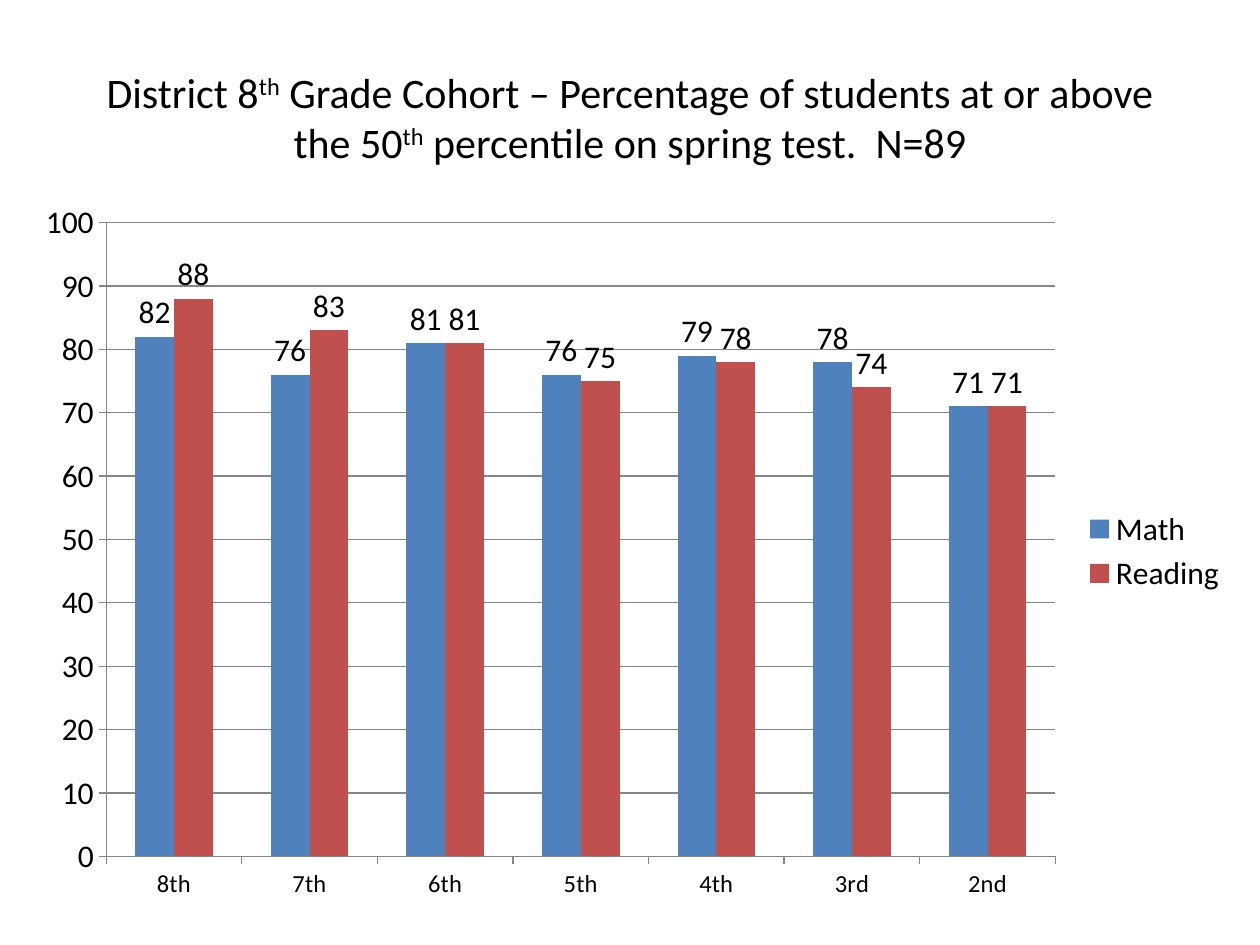
from pptx import Presentation
from pptx.chart.data import CategoryChartData
from pptx.dml.color import RGBColor
from pptx.enum.chart import XL_CHART_TYPE as ChartType, XL_LABEL_POSITION as LabelPosition
from pptx.enum.chart import XL_LEGEND_POSITION as LegendPosition, XL_TICK_MARK as TickMark
from pptx.enum.text import MSO_ANCHOR as Anchor, PP_ALIGN as Align
from pptx.util import Inches, Pt

FONT = "Calibri"
BLACK = "000000"
GRAY = "868686"
TITLE = [
    ("District 8", False),
    ("th", True),
    (" Grade Cohort – Percentage of students at or above the 50", False),
    ("th", True),
    (" percentile on spring test.  N=89", False),
]
GRADES = ["8th", "7th", "6th", "5th", "4th", "3rd", "2nd"]
SERIES = [
    ("Math", [82, 76, 81, 76, 79, 78, 71], "4F81BD"),
    ("Reading", [88, 83, 81, 75, 78, 74, 71], "C0504D"),
]
WIDTH, HEIGHT = 10, 7.5
TITLE_BOX = (0.05, 0.04, 0.9, 1 / 6)
CHART_BOX = (0.17 / WIDTH, 0.2, 9.67 / WIDTH, 5.75 / HEIGHT)


def color(value):
    return RGBColor.from_string(value)


def style_font(font, size):
    font.name = FONT
    font.size = Pt(size)
    font.color.rgb = color(BLACK)


def style_line(line):
    line.color.rgb = color(GRAY)
    line.width = Pt(0.75)


def place(box):
    return [Inches(share * side) for share, side in zip(box, (WIDTH, HEIGHT) * 2)]


def add_title(slide):
    title = slide.shapes.title
    title.left, title.top, title.width, title.height = place(TITLE_BOX)
    title.text_frame.vertical_anchor = Anchor.MIDDLE
    title.text_frame.word_wrap = True
    paragraph = title.text_frame.paragraphs[0]
    paragraph.alignment = Align.CENTER
    for text, raised in TITLE:
        run = paragraph.add_run()
        run.text = text
        style_font(run.font, 24)
        if raised:
            run.font._element.set("baseline", "30000")


def add_scores(slide):
    data = CategoryChartData()
    data.categories = GRADES
    for name, values, _ in SERIES:
        data.add_series(name, values)
    chart = slide.shapes.add_chart(
        ChartType.COLUMN_CLUSTERED, *place(CHART_BOX), data
    ).chart
    style_font(chart.font, 18)
    chart.has_title = False
    chart.has_legend = True
    chart.legend.position = LegendPosition.RIGHT
    chart.legend.include_in_layout = False

    plot = chart.plots[0]
    plot.gap_width = 150
    plot.overlap = 0
    plot.vary_by_categories = False
    for series, (_, _, fill) in zip(plot.series, SERIES):
        series.format.fill.solid()
        series.format.fill.fore_color.rgb = color(fill)
        series.invert_if_negative = False
        labels = series.data_labels
        labels.show_value = True
        labels.position = LabelPosition.OUTSIDE_END
        style_font(labels.font, 18)

    for axis, size in ((chart.category_axis, 14), (chart.value_axis, 18)):
        axis.major_tick_mark = TickMark.OUTSIDE
        axis.minor_tick_mark = TickMark.NONE
        style_font(axis.tick_labels.font, size)
        style_line(axis.format.line)
    value_axis = chart.value_axis
    value_axis.minimum_scale = 0
    value_axis.maximum_scale = 100
    value_axis.major_unit = 10
    value_axis.has_major_gridlines = True
    style_line(value_axis.major_gridlines.format.line)


def main():
    presentation = Presentation()
    presentation.slide_width = Inches(WIDTH)
    presentation.slide_height = Inches(HEIGHT)
    slide = presentation.slides.add_slide(presentation.slide_layouts[5])
    add_title(slide)
    add_scores(slide)
    presentation.save("out.pptx")


if __name__ == "__main__":
    main()
